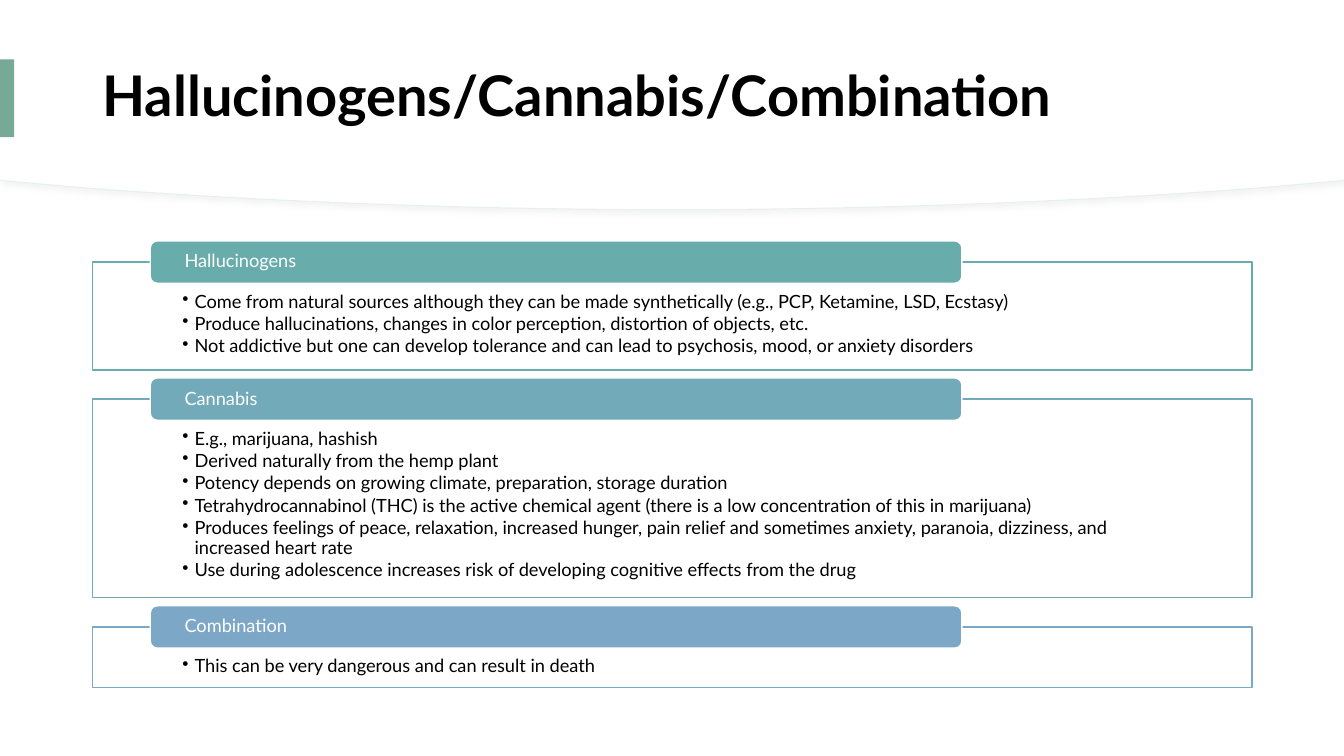
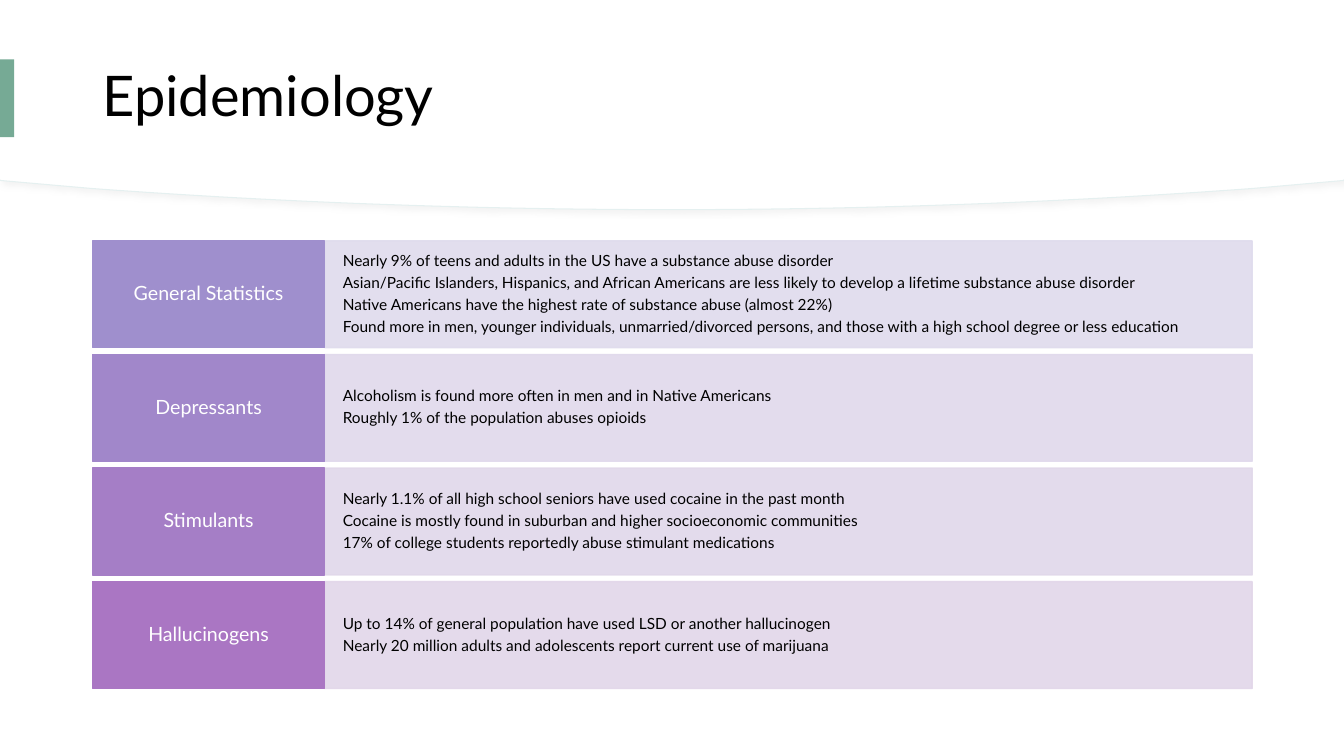
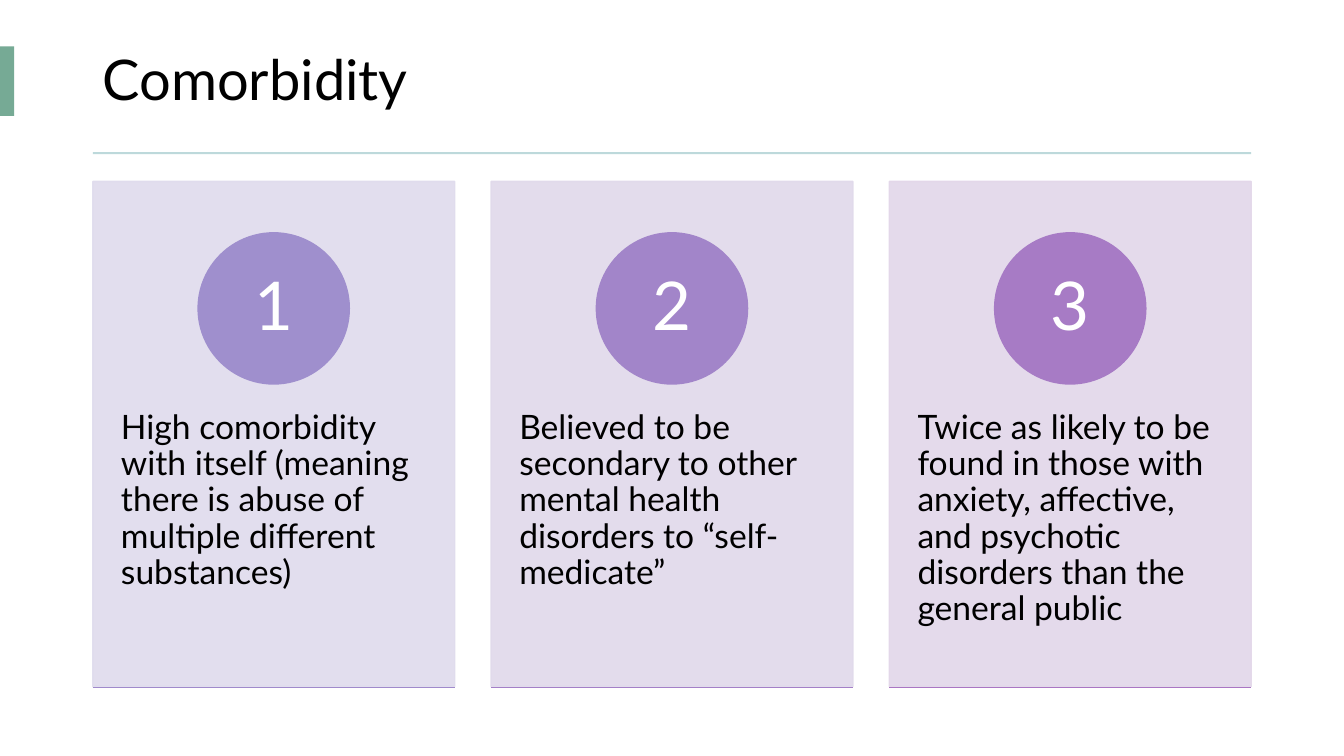
from dataclasses import dataclass
from typing import NamedTuple

from lxml import etree
from pptx import Presentation
from pptx.dml.color import RGBColor
from pptx.enum.shapes import MSO_CONNECTOR, MSO_SHAPE
from pptx.enum.text import MSO_ANCHOR, PP_ALIGN
from pptx.oxml.ns import qn
from pptx.util import Inches, Pt

RECTANGLE = MSO_SHAPE.RECTANGLE
ROUNDED = MSO_SHAPE.ROUNDED_RECTANGLE
OVAL = MSO_SHAPE.OVAL
STRAIGHT = MSO_CONNECTOR.STRAIGHT
TOP, MIDDLE = MSO_ANCHOR.TOP, MSO_ANCHOR.MIDDLE
LEFT, CENTER = PP_ALIGN.LEFT, PP_ALIGN.CENTER

FONT = "Lato"
BLACK = RGBColor(0x00, 0x00, 0x00)
WHITE = RGBColor(0xFF, 0xFF, 0xFF)
ACCENT = RGBColor(0x76, 0xAA, 0x95)
BAND_EDGE = RGBColor(0xE5, 0xF0, 0xF0)
BAND_SHADOW = RGBColor(0xD9, 0xD9, 0xD9)
RULE = RGBColor(0xBD, 0xD9, 0xDB)
TEAL = RGBColor(0x69, 0xAC, 0xAC)
AQUA = RGBColor(0x72, 0xAA, 0xBA)
BLUE = RGBColor(0x7D, 0xA7, 0xC6)
LAVENDER = RGBColor(0x9F, 0x8F, 0xCD)
LILAC = RGBColor(0xA1, 0x87, 0xCA)
VIOLET = RGBColor(0xA5, 0x7E, 0xC6)
ORCHID = RGBColor(0xAA, 0x76, 0xC3)
PALE_LAVENDER = RGBColor(0xDF, 0xDB, 0xED)
PALE_LILAC = RGBColor(0xE0, 0xD9, 0xEC)
PALE_VIOLET = RGBColor(0xE1, 0xD8, 0xEA)
PALE_ORCHID = RGBColor(0xE2, 0xD6, 0xE9)

SLIDE_WIDTH, SLIDE_HEIGHT = 13.33, 7.5
MARGIN = 0.92
CONTENT_WIDTH = 11.5
CONTENT_TOP = 2.39


class Box(NamedTuple):
    left: float
    top: float
    width: float
    height: float

    def lengths(self) -> list:
        return [Inches(value) for value in self]


@dataclass(frozen=True)
class TextStyle:
    size: float
    color: RGBColor = BLACK
    bold: bool = False
    align: PP_ALIGN = LEFT
    anchor: MSO_ANCHOR = MIDDLE
    insets: tuple = (0.1, 0.05, 0.1, 0.05)
    space_share: float = 0.35
    bullet_indent: float = 0


@dataclass(frozen=True)
class Topic:
    name: str
    color: RGBColor
    height: float
    points: tuple


@dataclass(frozen=True)
class Row:
    name: str
    color: RGBColor
    pale: RGBColor
    facts: tuple


@dataclass(frozen=True)
class Card:
    color: RGBColor
    pale: RGBColor
    base: RGBColor
    text: str


TOPIC_BODY = TextStyle(13, anchor=TOP, insets=(0.89, 0.3, 0.89, 0.1),
                       space_share=0.15, bullet_indent=0.12)
TOPIC_HEADER = TextStyle(13, WHITE, insets=(0.32, 0.02, 0.32, 0.02))
ROW_BODY = TextStyle(11, insets=(0.18, 0.27, 0.18, 0.27))
ROW_HEADER = TextStyle(14, WHITE, align=CENTER, insets=(0.12, 0.1, 0.12, 0.1))
CARD_BODY = TextStyle(24, anchor=TOP, insets=(0.28, 2.27, 0.28, 0.36))
CARD_NUMBER = TextStyle(48, WHITE, align=CENTER, insets=(0.12, 0.01, 0.12, 0.01))

TOPICS = (
    Topic("Hallucinogens", TEAL, 1.07, (
        "Come from natural sources although they can be made synthetically (e.g., PCP, Ketamine, LSD, Ecstasy)",
        "Produce hallucinations, changes in color perception, distortion of objects, etc.",
        "Not addictive but one can develop tolerance and can lead to psychosis, mood, or anxiety disorders",
    )),
    Topic("Cannabis", AQUA, 1.97, (
        "E.g., marijuana, hashish",
        "Derived naturally from the hemp plant",
        "Potency depends on growing climate, preparation, storage duration",
        "Tetrahydrocannabinol (THC) is the active chemical agent (there is a low concentration of this in marijuana)",
        "Produces feelings of peace, relaxation, increased hunger, pain relief and sometimes anxiety, paranoia, "
        "dizziness, and increased heart rate",
        "Use during adolescence increases risk of developing cognitive effects from the drug",
    )),
    Topic("Combination", BLUE, 0.6, (
        "This can be very dangerous and can result in death",
    )),
)

ROWS = (
    Row("General Statistics", LAVENDER, PALE_LAVENDER, (
        "Nearly 9% of teens and adults in the US have a substance abuse disorder",
        "Asian/Pacific Islanders, Hispanics, and African Americans are less likely to develop a lifetime "
        "substance abuse disorder",
        "Native Americans have the highest rate of substance abuse (almost 22%)",
        "Found more in men, younger individuals, unmarried/divorced persons, and those with a high school "
        "degree or less education",
    )),
    Row("Depressants", LILAC, PALE_LILAC, (
        "Alcoholism is found more often in men and in Native Americans",
        "Roughly 1% of the population abuses opioids",
    )),
    Row("Stimulants", VIOLET, PALE_VIOLET, (
        "Nearly 1.1% of all high school seniors have used cocaine in the past month",
        "Cocaine is mostly found in suburban and higher socioeconomic communities",
        "17% of college students reportedly abuse stimulant medications",
    )),
    Row("Hallucinogens", ORCHID, PALE_ORCHID, (
        "Up to 14% of general population have used LSD or another hallucinogen",
        "Nearly 20 million adults and adolescents report current use of marijuana",
    )),
)

CARDS = (
    Card(LAVENDER, PALE_LAVENDER, RGBColor(0xA0, 0x8A, 0xCB),
         "High comorbidity with itself (meaning there is abuse of multiple different substances)"),
    Card(RGBColor(0xA2, 0x85, 0xC9), RGBColor(0xE0, 0xD9, 0xEB), RGBColor(0xA4, 0x80, 0xC7),
         "Believed to be secondary to other mental health disorders to “self-medicate”"),
    Card(RGBColor(0xA7, 0x7B, 0xC5), PALE_ORCHID, ORCHID,
         "Twice as likely to be found in those with anxiety, affective, and psychotic disorders than the "
         "general public"),
)


def set_all(target, values: dict) -> None:
    for name, value in values.items():
        setattr(target, name, value)


def write_text(shape, lines: tuple, style: TextStyle) -> None:
    frame = shape.text_frame
    left, top, right, bottom = (Inches(inset) for inset in style.insets)
    set_all(frame, {"word_wrap": True, "vertical_anchor": style.anchor,
                    "margin_left": left, "margin_top": top,
                    "margin_right": right, "margin_bottom": bottom})
    for index, line in enumerate(lines):
        para = frame.add_paragraph() if index else frame.paragraphs[0]
        set_all(para, {"alignment": style.align, "line_spacing": 0.9,
                       "space_after": Pt(style.size * style.space_share)})
        if style.bullet_indent:
            properties = para._p.get_or_add_pPr()
            indent = Inches(style.bullet_indent)
            properties.set("marL", str(indent))
            properties.set("indent", str(-indent))
            etree.SubElement(properties, qn("a:buChar")).set("char", "•")
        span = para.add_run()
        span.text = line
        set_all(span.font, {"name": FONT, "size": Pt(style.size), "bold": style.bold})
        span.font.color.rgb = style.color


def paint(shape, fill: RGBColor, border: RGBColor | None = None, weight: float = 1) -> None:
    shape.shadow.inherit = False
    shape.fill.solid()
    shape.fill.fore_color.rgb = fill
    if border is None:
        shape.line.fill.background()
    else:
        shape.line.color.rgb = border
        shape.line.width = Pt(weight)


def add_block(page, kind: MSO_SHAPE, box: Box, fill: RGBColor, border: RGBColor | None = None,
              lines: tuple = (), style: TextStyle | None = None, opacity: int = 100):
    shape = page.shapes.add_shape(kind, *box.lengths())
    paint(shape, fill, border)
    if opacity < 100:
        for color in shape.element.spPr.iter(qn("a:srgbClr")):
            if color.get("val") == str(fill):
                etree.SubElement(color, qn("a:alpha")).set("val", str(opacity * 1000))
    if style:
        write_text(shape, lines, style)
    return shape


def bezier(points: tuple, steps: int = 30) -> list:
    weights = (1, 3, 3, 1)
    return [
        tuple(sum(weight * (1 - t) ** (3 - power) * t ** power * point[axis]
                  for power, (weight, point) in enumerate(zip(weights, points)))
              for axis in (0, 1))
        for t in (step / steps for step in range(steps + 1))
    ]


def add_band(page, depth: float):
    side, shoulder, bend = depth - 0.29, depth - 0.21, depth - 0.08
    middle = SLIDE_WIDTH / 2
    outline = [(SLIDE_WIDTH, 0), (SLIDE_WIDTH, side)]
    outline += bezier(((12.42, shoulder), (10.65, bend), (8.71, depth), (middle, depth)))
    outline += bezier(((middle, depth), (4.63, depth), (2.68, bend), (0.91, shoulder)))
    outline.append((0, side))
    builder = page.shapes.build_freeform(0, 0)
    builder.add_line_segments([(Inches(x), Inches(y)) for x, y in outline])
    return builder.convert_to_shape()


def add_curved_header(page) -> None:
    edge = add_band(page, 2.08)
    paint(edge, WHITE, BAND_EDGE, 0.75)
    effects = edge.element.spPr.find(qn("a:effectLst"))
    shadow = etree.SubElement(effects, qn("a:outerShdw"))
    for name, value in {"blurRad": Pt(4), "dist": Pt(3), "dir": 45 * 60000}.items():
        shadow.set(name, str(value))
    color = etree.SubElement(shadow, qn("a:srgbClr"))
    color.set("val", str(BAND_SHADOW))
    etree.SubElement(color, qn("a:alpha")).set("val", "30000")
    paint(add_band(page, 2.07), WHITE)


def add_title(page, title: str, box: Box, marker: Box, bold: bool = False) -> None:
    holder = page.shapes.add_textbox(*box.lengths())
    write_text(holder, (title,), TextStyle(40, bold=bold, space_share=0))
    add_block(page, RECTANGLE, marker, ACCENT)


def add_curved_page(deck, title: str, bold: bool = False):
    page = deck.slides.add_slide(deck.slide_layouts[6])
    add_curved_header(page)
    add_title(page, title, Box(MARGIN, 0.28, CONTENT_WIDTH, 1.39), Box(0, 0.59, 0.14, 0.77), bold)
    return page


def add_topics_page(deck) -> None:
    page = add_curved_page(deck, "Hallucinogens/Cannabis/Combination", True)
    header_height, gap = 0.42, 0.08
    top = CONTENT_TOP
    for topic in TOPICS:
        body = Box(MARGIN, top + header_height / 2, CONTENT_WIDTH, topic.height)
        add_block(page, RECTANGLE, body, WHITE, topic.color, topic.points, TOPIC_BODY, 90)
        header = Box(1.49, top, 8.05, header_height)
        add_block(page, ROUNDED, header, topic.color, WHITE, (topic.name,), TOPIC_HEADER)
        top = body.top + body.height + gap


def add_statistics_page(deck) -> None:
    page = add_curved_page(deck, "Epidemiology")
    name_width, height, pitch = 2.3, 1.06, 1.127
    for index, row in enumerate(ROWS):
        top = CONTENT_TOP + index * pitch
        facts = Box(MARGIN + name_width, top, CONTENT_WIDTH - name_width, height)
        add_block(page, RECTANGLE, facts, row.pale, row.pale, row.facts, ROW_BODY, 90)
        name = Box(MARGIN, top, name_width, height)
        add_block(page, RECTANGLE, name, row.color, row.color, (row.name,), ROW_HEADER)


def add_cards_page(deck) -> None:
    page = deck.slides.add_slide(deck.slide_layouts[6])
    add_title(page, "Comorbidity", Box(MARGIN, 0.27, 11.49, 1.1), Box(0, 0.46, 0.14, 0.69))
    add_block(page, RECTANGLE, Box(MARGIN, 1.51, 11.49, 0.02), RULE)
    width, pitch, diameter = 3.59, 3.95, 1.5
    for index, card in enumerate(CARDS):
        panel = Box(MARGIN + index * pitch, 1.8, width, 5.01)
        add_block(page, RECTANGLE, panel, card.pale, card.pale, (card.text,), CARD_BODY, 90)
        circle = Box(panel.left + (width - diameter) / 2, 2.31, diameter, diameter)
        add_block(page, OVAL, circle, card.color, card.color, (str(index + 1),), CARD_NUMBER)
        base_y = Inches(6.82)
        base = page.shapes.add_connector(STRAIGHT, Inches(panel.left), base_y,
                                         Inches(panel.left + width), base_y)
        base.line.color.rgb = card.base
        base.line.width = Pt(1)
        etree.SubElement(base.element.spPr, qn("a:effectLst"))


def main() -> None:
    deck = Presentation()
    set_all(deck, {"slide_width": Inches(SLIDE_WIDTH), "slide_height": Inches(SLIDE_HEIGHT)})
    add_topics_page(deck)
    add_statistics_page(deck)
    add_cards_page(deck)
    deck.save("out.pptx")


if __name__ == "__main__":
    main()
